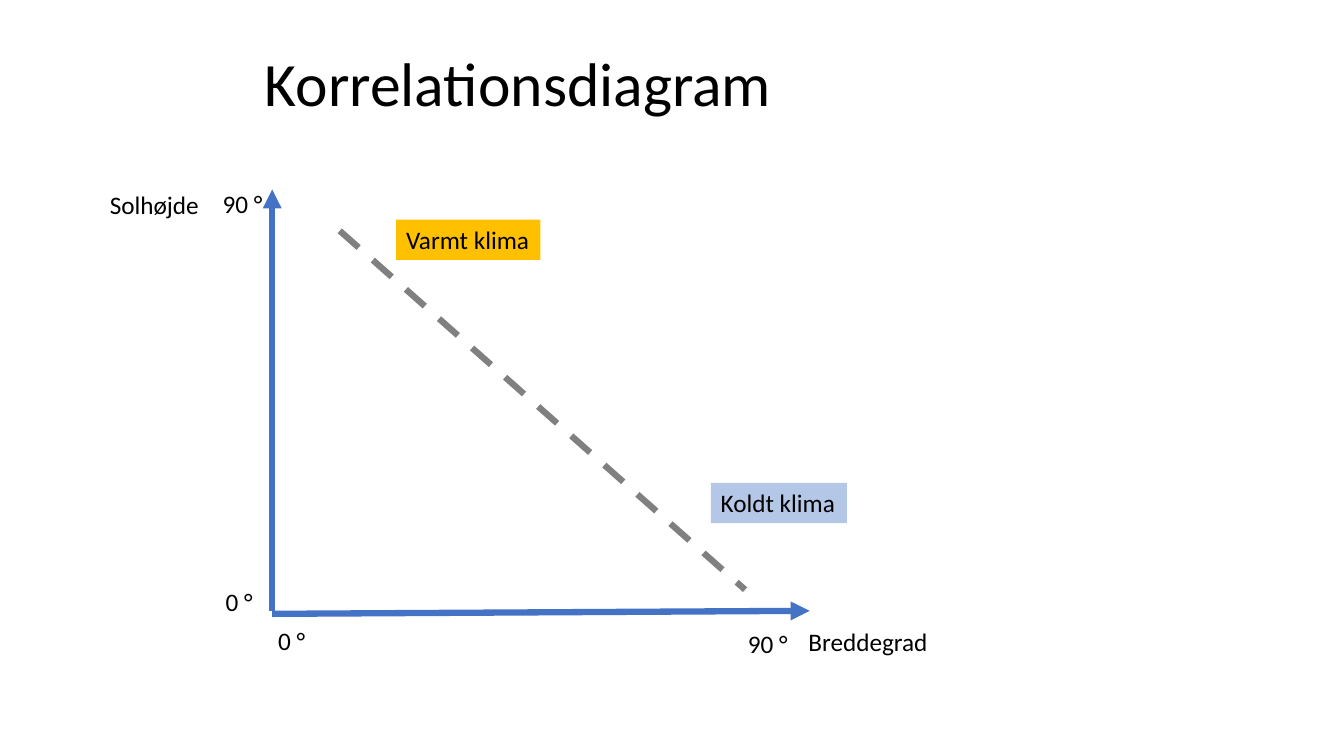
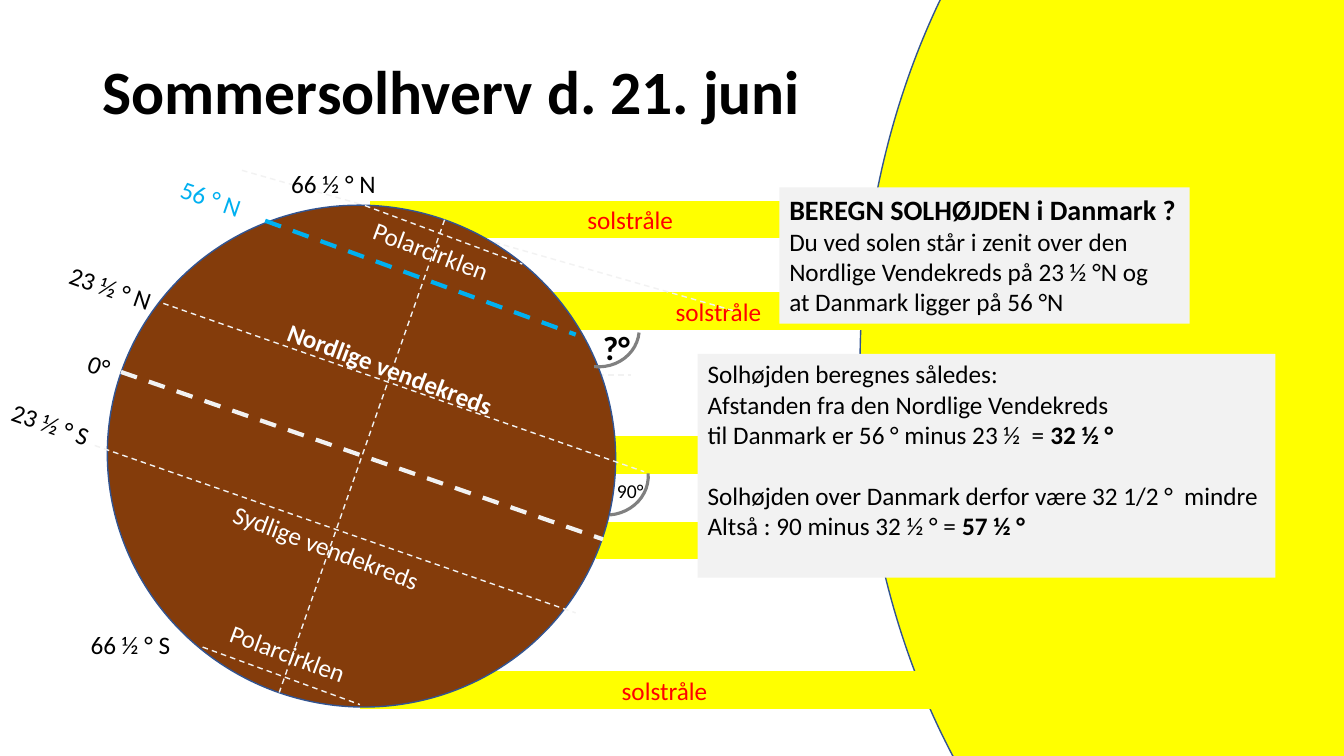
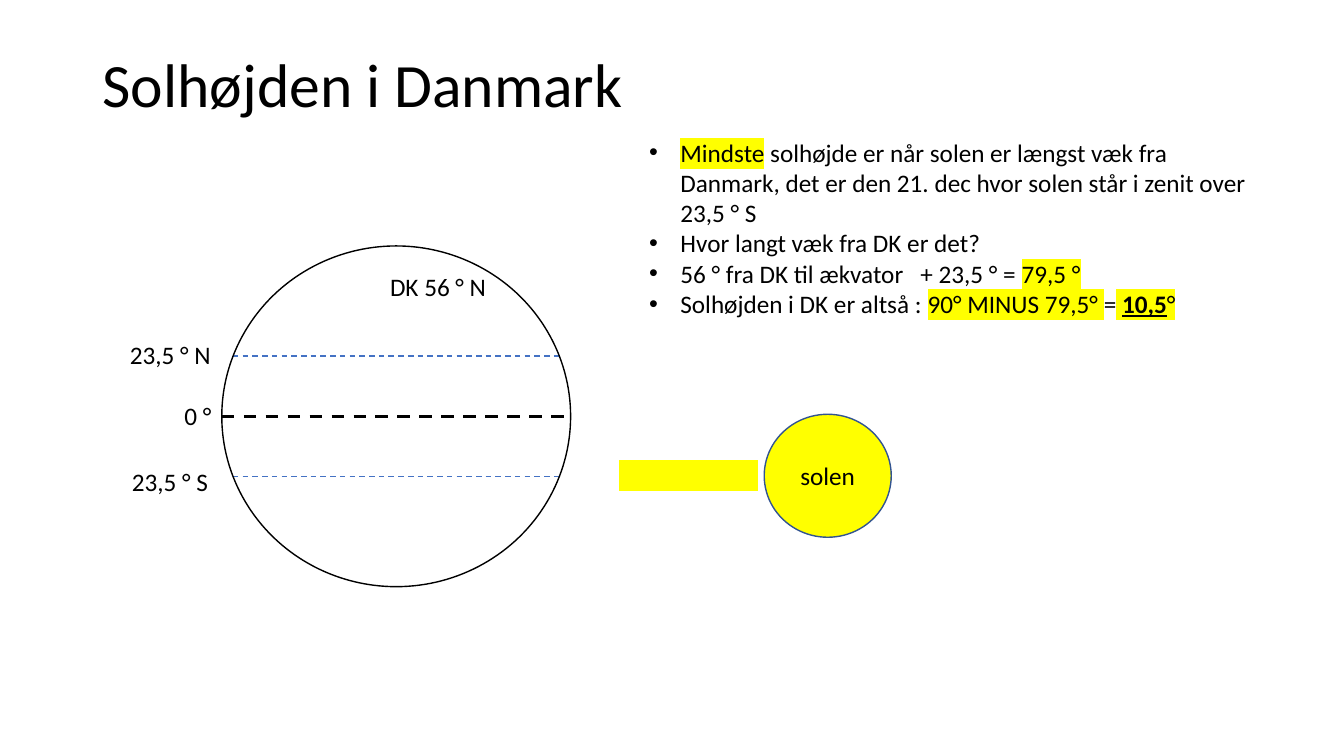
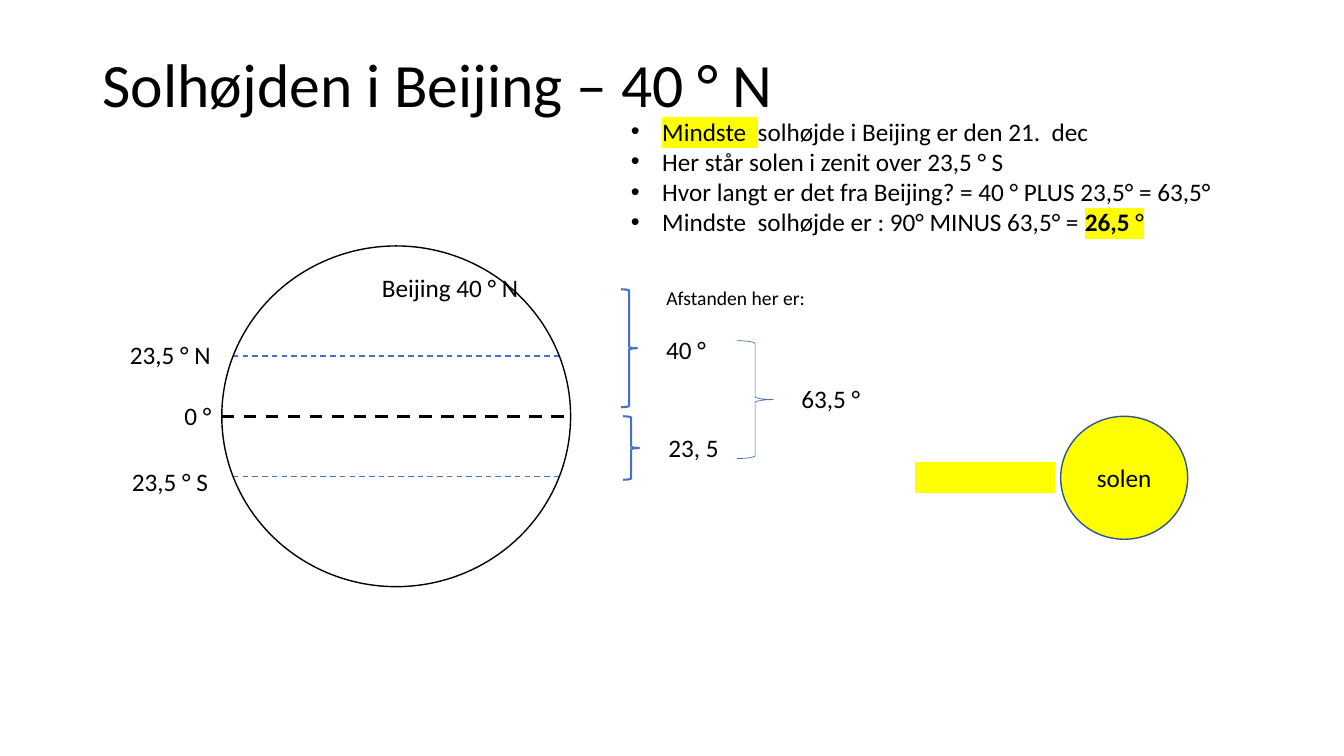
from dataclasses import dataclass
from typing import Any

from lxml.etree import SubElement
from pptx import Presentation
from pptx.dml.color import RGBColor
from pptx.enum.dml import MSO_LINE
from pptx.enum.shapes import MSO_CONNECTOR, MSO_SHAPE
from pptx.enum.text import MSO_ANCHOR, MSO_AUTO_SIZE, PP_ALIGN
from pptx.oxml.ns import qn
from pptx.util import Inches, Pt

# Every position and length counts cells of a square grid, ten to the inch.
CELL = 0.1
COLUMNS, ROWS = 133.3, 75
FONT = "Calibri"
BODY_SIZE, TITLE_SIZE = 18, 44
LINE_GAP = 22
BULLET_INDENT = 3.1
LABEL_HEIGHT = 4
BLACK, WHITE, GREY, PALE = "000000", "FFFFFF", "808080", "F2F2F2"
BLUE, OUTLINE, SKY, ICE = "4472C4", "325491", "00B0F0", "B4C7E7"
YELLOW, AMBER, RED, BROWN = "FFFF00", "FFC000", "FF0000", "843C0B"


def cells(count):
    return Inches(count * CELL)


def paint(target, colour):
    """Give a fill, or the fill of a line, a colour; None clears it."""
    if colour is None:
        target.background()
    else:
        target.solid()
        target.fore_color.rgb = RGBColor.from_string(colour)


def format_run(run, size, colour, style):
    """Style letters: b is bold, u is underlined, h is highlighted."""
    font = run.font
    font.size = Pt(size)
    font.bold = "b" in style
    font.underline = "u" in style
    paint(font.fill, colour)
    font.name = FONT
    if "h" in style:
        properties = font._element
        highlight = SubElement(properties, qn("a:highlight"))
        SubElement(highlight, qn("a:srgbClr")).set("val", YELLOW)
        properties.find(qn("a:solidFill")).addnext(highlight)


def add_bullet(paragraph):
    properties = paragraph._p.get_or_add_pPr()
    properties.set("marL", str(cells(BULLET_INDENT)))
    properties.set("indent", str(-cells(BULLET_INDENT)))
    SubElement(properties, qn("a:buFont")).set("typeface", "Arial")
    SubElement(properties, qn("a:buChar")).set("char", "•")


def write(shape, paragraphs, colour=BLACK, sizes=(), gaps=(), align=PP_ALIGN.LEFT,
          bullets=False):
    """Fill a shape; each paragraph is a string or a list of (text, style) runs."""
    sizes, gaps = dict(sizes), dict(gaps)
    frame = shape.text_frame
    for index, content in enumerate(paragraphs):
        paragraph = frame.add_paragraph() if index else frame.paragraphs[0]
        paragraph.alignment = align
        paragraph.space_before = Pt(gaps.get(index, 0))
        runs = [(content, "")] if isinstance(content, str) else content
        for text, style in runs:
            run = paragraph.add_run()
            run.text = text
            format_run(run, sizes.get(index, BODY_SIZE), colour, style)
        if bullets:
            add_bullet(paragraph)


@dataclass
class Region:
    """A part of a slide; what it draws is placed from its left top corner."""

    slide: Any
    left: float = 0
    top: float = 0

    def frame(self, left, top, width, height):
        return (cells(self.left + left), cells(self.top + top),
                cells(width), cells(height))

    def shape(self, kind, box, fill=None, line=None, weight=1, rotation=0):
        shape = self.slide.shapes.add_shape(kind, *self.frame(*box))
        shape.shadow.inherit = False
        shape.rotation = rotation
        paint(shape.fill, fill)
        paint(shape.line.fill, line)
        if line:
            shape.line.width = Pt(weight)
        return shape

    def line(self, start, end, colour, weight=1, dashed=True, arrow=False):
        ends = [cells(offset + value) for point in (start, end)
                for offset, value in zip((self.left, self.top), point)]
        connector = self.slide.shapes.add_connector(MSO_CONNECTOR.STRAIGHT, *ends)
        paint(connector.line.fill, colour)
        connector.line.width = Pt(weight)
        if dashed:
            connector.line.dash_style = MSO_LINE.DASH
        if arrow:
            SubElement(connector.line._get_or_add_ln(), qn("a:tailEnd")).set("type", "triangle")
        SubElement(connector._element.spPr, qn("a:effectLst"))

    def label(self, text, left, top, width, height=LABEL_HEIGHT, colour=BLACK,
              size=BODY_SIZE, style="", rotation=0, fill=None):
        """One line of text in a box that fits it."""
        box = self.slide.shapes.add_textbox(*self.frame(left, top, width, height))
        box.rotation = rotation
        box.text_frame.word_wrap = False
        box.text_frame.auto_size = MSO_AUTO_SIZE.SHAPE_TO_FIT_TEXT
        paint(box.fill, fill)
        write(box, [[(text, style)]], colour, {0: size})

    def panel(self, width, height, paragraphs, fill=None, **layout):
        """Wrapped text that fills the region."""
        box = self.slide.shapes.add_textbox(*self.frame(0, 0, width, height))
        box.text_frame.word_wrap = True
        box.text_frame.margin_right = 0 if fill else cells(1)
        paint(box.fill, fill)
        write(box, paragraphs, **layout)


def add_title(slide, text, left=9.2, top=1.4, width=115, style="", align=PP_ALIGN.LEFT):
    box = slide.shapes.add_textbox(*Region(slide, left, top).frame(0, 0, width, 14.5))
    frame = box.text_frame
    frame.word_wrap = True
    frame.vertical_anchor = MSO_ANCHOR.MIDDLE
    write(box, [[(text, style)]], sizes={0: TITLE_SIZE}, align=align)
    frame.paragraphs[0].line_spacing = 0.9


def draw_correlation(region):
    """Axes, falling trend and labels; the region starts at the tip of the y axis."""
    region.line((0, 42.1), (53.3, 41.8), BLUE, 4.5, dashed=False, arrow=True)
    region.line((0, 41.8), (0, 0), BLUE, 4.5, dashed=False, arrow=True)
    for text, left, top, width in (
            ("Solhøjde", -17.1, -0.5, 11.5), ("Breddegrad", 52.2, 42.8, 14),
            ("90 °", -5.9, -0.6, 6), ("90 °", 46.2, 43, 6),
            ("0 °", -5.6, 38.9, 4.7), ("0 °", -0.4, 42.7, 4.7)):
        region.label(text, left, top, width)
    region.line((6.7, 4.1), (46.9, 39.7), GREY, 4.5)
    region.label("Varmt klima", 12.3, 3, 14.3, fill=AMBER)
    region.label("Koldt klima", 43.5, 29.1, 13.5, fill=ICE)


def draw_sunrays(region):
    """The large sun at the right edge and the rays that reach the Earth."""
    def add_ray(left, top, width, text=""):
        ray = region.shape(MSO_SHAPE.FLOWCHART_PROCESS, (left, top, width, 3.7), YELLOW)
        ray.text_frame.vertical_anchor = MSO_ANCHOR.MIDDLE
        if text:
            write(ray, [text], RED, align=PP_ALIGN.CENTER)

    add_ray(59.1, 51.8, 29.3)
    region.shape(MSO_SHAPE.OVAL, (85.3, -30.8, 100.1, 134.1), YELLOW, OUTLINE)
    add_ray(60.8, 43.3, 29.3)
    for left, top, width in ((35.7, 66.6, 60.4), (54.6, 29, 33.3), (36.7, 19.9, 51.6)):
        add_ray(left, top, width, "solstråle")


def draw_angle(region, text, rotation, label_box, **font):
    region.shape(MSO_SHAPE.ARC, (0, 0, 7.6, 8.2), line=GREY, weight=2.25, rotation=rotation)
    region.label(text, *label_box, **font)


def draw_tilted_earth(region):
    """The Earth with its axis, parallels and their names."""
    tilt, name_tilt = 19.2, 20.5
    region.line((1.5, 16.8), (52, 16.8), PALE)
    region.line((13.4, -3.5), (62.1, 10.4), PALE)
    region.shape(MSO_SHAPE.OVAL, (0, 0, 50.5, 49.7), BROWN, OUTLINE, rotation=tilt)
    for start, end, colour, weight in (
            ((1.4, 16.5), (49.2, 33.1), PALE, 3),
            ((33.5, 1.4), (17.1, 48.3), PALE, 1),
            ((-1.2, 23.8), (46.5, 40.4), PALE, 1),
            ((5.6, 9.7), (53.3, 26.4), PALE, 1),
            ((9.5, 43.8), (25.1, 49.5), PALE, 1),
            ((25.6, 0), (41.2, 5.8), PALE, 1),
            ((15.7, 1.5), (46.5, 12.8), SKY, 3)):
        region.line(start, end, colour, weight)
    for text, left, top, width, rotation, colour in (
            ("0°", -2.8, 13.9, 4.2, tilt, BLACK),
            ("23 ½ ° N", -4.8, 6.2, 10.5, tilt, BLACK),
            ("23 ½ ° S", -10.5, 19.7, 10, tilt, BLACK),
            ("66 ½ ° N", 17.3, -4.2, 10.5, 0, BLACK),
            ("66 ½ ° S", -2.6, 41.5, 10, 0, BLACK),
            ("56 ° N", 6.3, -2.7, 8.2, tilt, SKY),
            ("Sydlige vendekreds", 11.1, 31.9, 21.6, name_tilt, WHITE),
            ("Polarcirklen", 11, 42.4, 14.1, name_tilt, WHITE),
            ("Polarcirklen", 25.2, 2.5, 14.1, name_tilt, WHITE)):
        region.label(text, left, top, width, rotation=rotation, colour=colour)
    region.label("Nordlige vendekreds", 16.4, 14.2, 23.6, rotation=name_tilt,
                 colour=WHITE, style="b")


def draw_globe(region, place, place_box):
    """Outline globe with equator, tropics and the name of one place."""
    width, height, inset, tropic = 34.6, 33.8, 1.1, 6
    middle = height / 2
    region.line((0, middle), (width, middle), BLACK, 2.25)
    for row in (middle + tropic, middle - tropic):
        region.line((inset, row), (width - inset, row), BLUE)
    region.shape(MSO_SHAPE.OVAL, (0, 0, width, height), line=BLACK)
    region.label("0 °", -4.7, 14.8, 4.7)
    region.label("23,5 ° N", -10.1, 8.8, 10.1)
    region.label("23,5 ° S", -9.9, 21.4, 9.7)
    region.label(place, *place_box)


def draw_small_sun(region):
    sun = region.shape(MSO_SHAPE.OVAL, (0, 0, 12.6, 12.2), YELLOW, OUTLINE)
    sun.text_frame.vertical_anchor = MSO_ANCHOR.MIDDLE
    write(sun, ["solen"], align=PP_ALIGN.CENTER)
    region.shape(MSO_SHAPE.FLOWCHART_PROCESS, (-14.4, 4.5, 13.8, 3.1), YELLOW)


def draw_distances(region):
    """Braces that add two distances in degrees."""
    for box, weight in (((0, 0, 1.6, 11.7), 1.5), ((0.2, 12.6, 1.6, 6.3), 1.5),
                        ((11.5, 5.1, 3.6, 11.7), 0.5)):
        region.shape(MSO_SHAPE.RIGHT_BRACE, box, line=BLUE, weight=weight)
    region.label("Afstanden her er:", 3.5, -0.8, 15.9, 3.4, size=14)
    for text, left, top, width in (("40 °", 3.5, 4, 6), ("23, 5", 3.7, 13.7, 7.1),
                                   ("63,5 °", 16.9, 8.8, 7.9)):
        region.label(text, left, top, width)


def build_correlation(slide):
    add_title(slide, "Korrelationsdiagram", left=0, top=1.3, width=102.8,
              align=PP_ALIGN.CENTER)
    draw_correlation(Region(slide, 27, 18.8))


def build_solstice(slide):
    draw_sunrays(Region(slide))
    draw_angle(Region(slide, 56.4, 43.2), "90°", 85.3, (3.8, 3.8, 5.1, 3.4), size=14)
    add_title(slide, "Sommersolhverv d. 21. juni", top=2.1, style="b")
    draw_tilted_earth(Region(slide, 10.6, 20.4))
    Region(slide, 77.3, 18.6).panel(40.7, 13.5, [
        [("BEREGN SOLHØJDEN i Danmark ?", "b")],
        "Du ved solen står i zenit over den",
        "Nordlige Vendekreds på 23 ½ °N og",
        "at Danmark ligger på 56 °N",
    ], fill=PALE, sizes={0: 20})
    Region(slide, 69.2, 35.1).panel(57.3, 22.2, [
        "Solhøjden beregnes således:",
        "Afstanden fra den Nordlige Vendekreds",
        [("til Danmark er 56 ° minus 23 ½  = ", ""), ("32 ½ °", "b")],
        "Solhøjden over Danmark derfor være 32 1/2 °  mindre",
        [("Altså : 90 minus 32 ½ ° = ", ""), ("57 ½ °", "b")],
    ], fill=PALE, gaps={3: LINE_GAP})
    draw_angle(Region(slide, 55.5, 28.5), "?°", 95.6, (3.3, 3.4, 5.5, 5), size=24, style="b")


def build_denmark(slide):
    add_title(slide, "Solhøjden i Danmark")
    draw_globe(Region(slide, 22, 24.4), "DK 56 ° N", (15.7, 2, 11.7))
    draw_small_sun(Region(slide, 75.8, 41.1))
    Region(slide, 63.4, 13.1).panel(63.2, 22.2, [
        [("Mindste", "h"), (" solhøjde er når solen er længst væk fra Danmark, det er "
                            "den 21. dec hvor solen står i zenit over 23,5 ° S", "")],
        "Hvor langt væk fra DK er det?",
        [("56 ° fra DK til ækvator   + 23,5 ° = ", ""), ("79,5 °", "h")],
        [("Solhøjden i DK er altså : ", ""), ("90° MINUS 79,5° ", "h"), ("=", ""),
         (" ", "h"), ("10,5", "bhu"), ("°", "h")],
    ], bullets=True)


def build_beijing(slide):
    add_title(slide, "Solhøjden i Beijing – 40 ° N")
    draw_globe(Region(slide, 22, 24.4), "Beijing 40 ° N", (14.9, 2.1, 15.7))
    draw_small_sun(Region(slide, 105.2, 41.3))
    Region(slide, 61.6, 11).panel(63.2, 13.1, [
        [("Mindste  ", "h"), ("solhøjde i Beijing er den 21.  dec", "")],
        "Her står solen i zenit over 23,5 ° S",
        "Hvor langt er det fra Beijing? = 40 ° PLUS 23,5° = 63,5°",
        [("Mindste  solhøjde er : 90° MINUS 63,5° = ", ""), ("26,5", "bh"), (" °", "h")],
    ], bullets=True)
    draw_distances(Region(slide, 61.6, 28.7))


def main():
    presentation = Presentation()
    presentation.slide_width = cells(COLUMNS)
    presentation.slide_height = cells(ROWS)
    blank = presentation.slide_layouts[6]
    for build in (build_correlation, build_solstice, build_denmark, build_beijing):
        build(presentation.slides.add_slide(blank))
    presentation.save("out.pptx")


if __name__ == "__main__":
    main()
